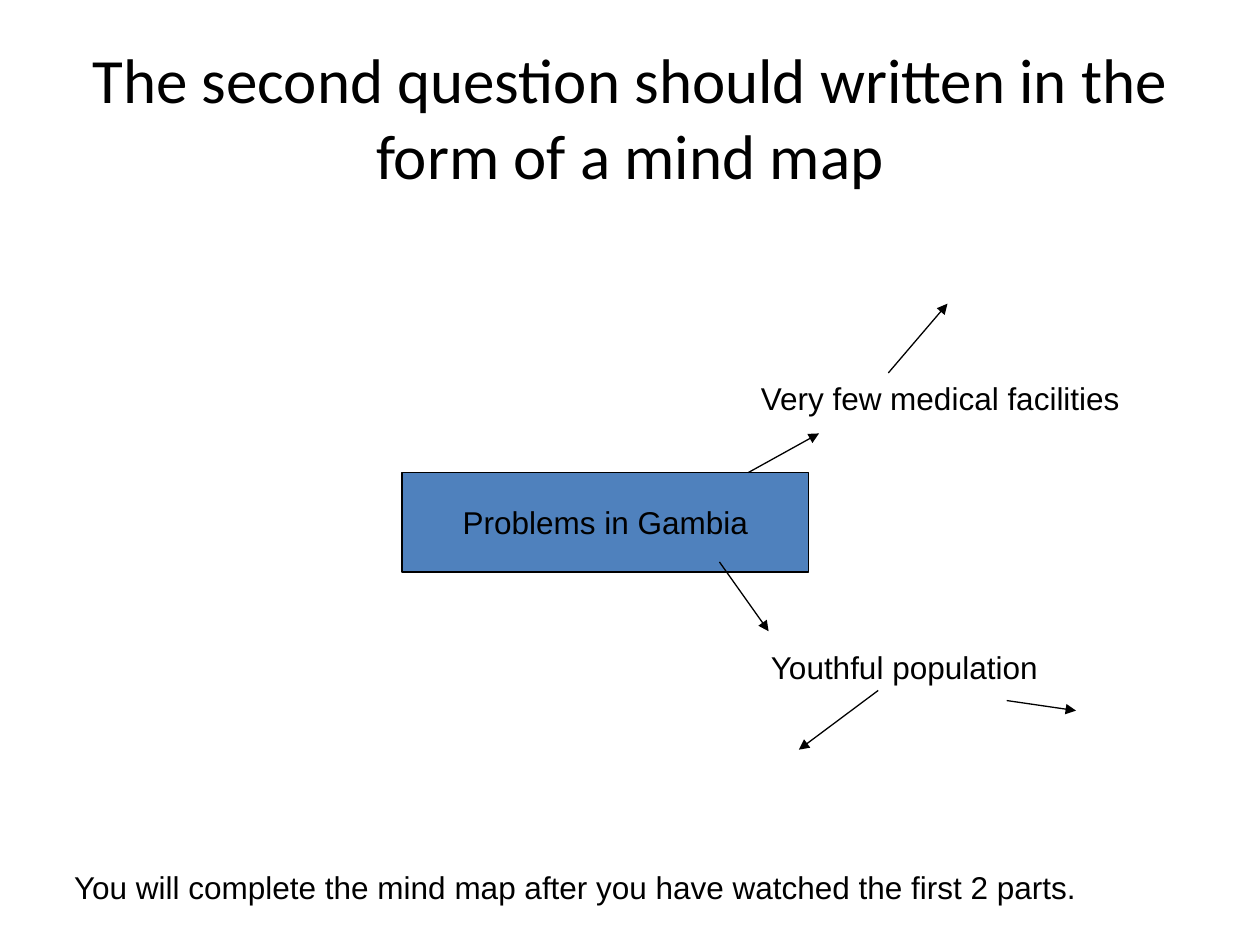
from dataclasses import dataclass

from lxml import etree
from pptx import Presentation
from pptx.dml.color import RGBColor
from pptx.enum.shapes import MSO_CONNECTOR, MSO_SHAPE
from pptx.enum.text import MSO_ANCHOR, MSO_AUTO_SIZE, PP_ALIGN
from pptx.oxml.ns import qn
from pptx.util import Inches, Pt

RECTANGLE = MSO_SHAPE.RECTANGLE
STRAIGHT = MSO_CONNECTOR.STRAIGHT
LEFT, CENTER = PP_ALIGN.LEFT, PP_ALIGN.CENTER
TOP, MIDDLE = MSO_ANCHOR.TOP, MSO_ANCHOR.MIDDLE
GROW, FIXED = MSO_AUTO_SIZE.SHAPE_TO_FIT_TEXT, MSO_AUTO_SIZE.NONE


@dataclass(frozen=True)
class Theme:
    ink: RGBColor = RGBColor(0, 0, 0)
    topic_fill: RGBColor = RGBColor(0x4F, 0x81, 0xBD)
    title_font: str = "Calibri"
    body_font: str = "Arial"
    title_size: int = 36
    body_size: int = 18
    line_width: float = 0.75


@dataclass(frozen=True)
class Label:
    text: str
    column: float
    row: float
    columns: float


@dataclass(frozen=True)
class Arrow:
    start: tuple[float, float]
    end: tuple[float, float]


THEME = Theme()
COLUMNS, ROWS = 100, 75  # square grid cells, a tenth of an inch each
LABEL_ROWS = 4

LABELS = [
    Label("Very few medical facilities", 59.4, 29.6, 30.6),
    Label("Youthful population", 60.2, 50.9, 23.4),
    Label("You will complete the mind map after you have watched the first 2 parts.",
          4.9, 68.4, 81.7),
]
ARROWS = [
    Arrow((59.4, 37.5), (65, 34.4)),    # topic to medical facilities
    Arrow((57.1, 44.6), (61, 50.1)),    # topic to population
    Arrow((69.7, 54.8), (63.4, 59.5)),  # onward from population
    Arrow((79.9, 55.6), (85.4, 56.4)),
    Arrow((70.5, 29.6), (75.2, 24.1)),  # onward from medical facilities
]


def grid(*cells: float) -> list[int]:
    return [Inches(cell / 10) for cell in cells]


def write(shape, text: str, *, font: str = THEME.body_font, size: int = THEME.body_size,
          align=LEFT, anchor=TOP, wrap: bool = False, fit=FIXED) -> None:
    frame = shape.text_frame
    frame.auto_size = fit
    frame.word_wrap = wrap
    frame.vertical_anchor = anchor
    para = frame.paragraphs[0]
    para.alignment = align
    span = para.add_run()
    span.text = text
    span.font.name = font
    span.font.size = Pt(size)
    span.font.color.rgb = THEME.ink


def outline(line) -> None:
    line.color.rgb = THEME.ink
    line.width = Pt(THEME.line_width)


def draw_label(page, label: Label) -> None:
    box = page.shapes.add_textbox(*grid(label.column, label.row, label.columns, LABEL_ROWS))
    write(box, label.text, fit=GROW)


def draw_arrow(page, arrow: Arrow) -> None:
    connector = page.shapes.add_connector(STRAIGHT, *grid(*arrow.start, *arrow.end))
    outline(connector.line)
    etree.SubElement(connector.line._get_or_add_ln(), qn("a:tailEnd"), type="triangle")
    etree.SubElement(connector._element.spPr, qn("a:effectLst"))


def main() -> None:
    deck = Presentation()
    deck.slide_width, deck.slide_height = grid(COLUMNS, ROWS)
    page = deck.slides.add_slide(deck.slide_layouts[6])

    # Title
    title = page.shapes.add_textbox(*grid(5, 3, 90, 12.5))
    write(title, "The second question should written in the form of a mind map",
          font=THEME.title_font, size=THEME.title_size, align=CENTER, anchor=MIDDLE, wrap=True)

    # Central topic
    topic = page.shapes.add_shape(RECTANGLE, *grid(31.9, 37.5, 32.3, 7.9))
    topic.shadow.inherit = False
    topic.fill.solid()
    topic.fill.fore_color.rgb = THEME.topic_fill
    outline(topic.line)
    write(topic, "Problems in Gambia", align=CENTER, anchor=MIDDLE)

    # Branches and closing note
    for label in LABELS:
        draw_label(page, label)
    for arrow in ARROWS:
        draw_arrow(page, arrow)

    deck.save("out.pptx")


if __name__ == "__main__":
    main()
